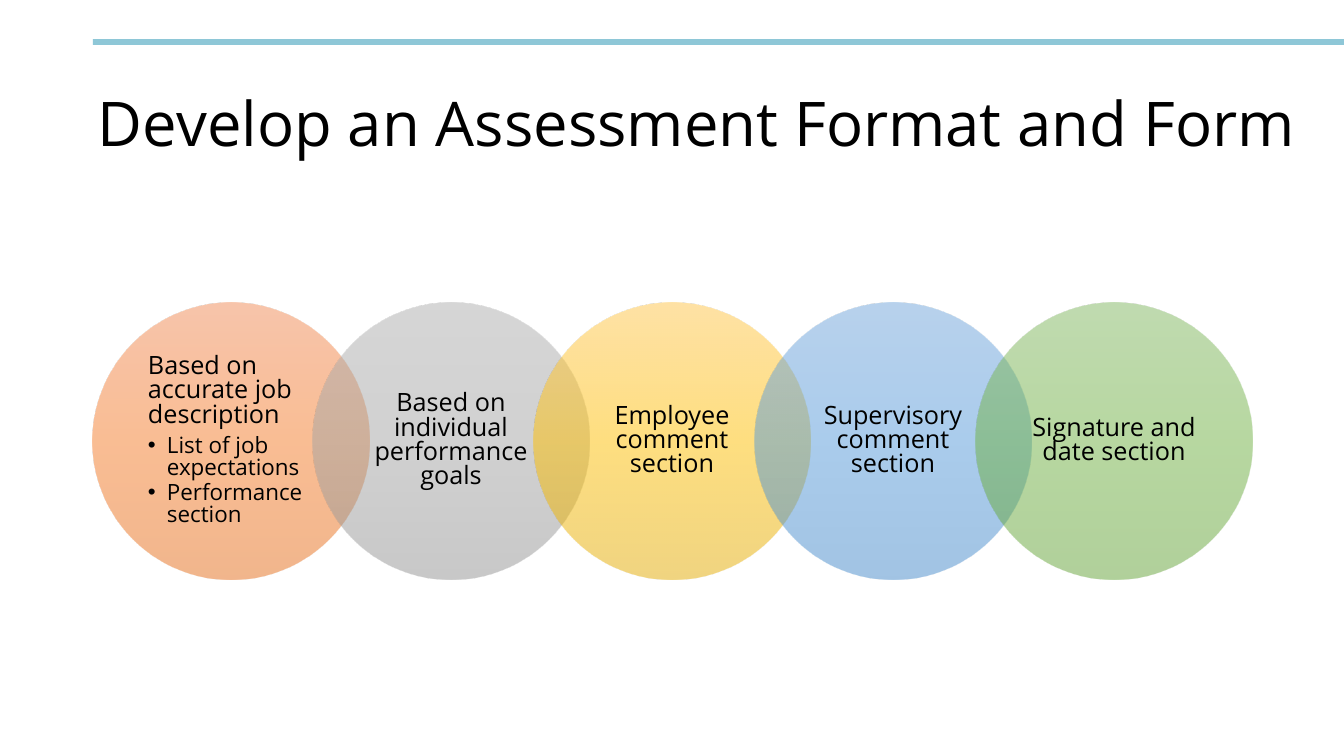
from lxml.etree import SubElement
from pptx import Presentation
from pptx.dml.color import RGBColor
from pptx.enum.shapes import MSO_SHAPE as Shape
from pptx.enum.text import MSO_ANCHOR as Anchor, PP_ALIGN as Align
from pptx.oxml.ns import qn
from pptx.util import Emu, Pt

COLORS = {
    "text": "000000",
    "rule": "8EC7D7",
    "orange": ("F18C57", "F67B28", "E56C19"),
    "gray": ("AFAFAF", "A5A5A5", "939393"),
    "yellow": ("FFC64B", "FFC000", "E3AB00"),
    "blue": ("71A6DB", "559BDB", "448ACA"),
    "green": ("81B861", "6FB242", "62A336"),
}


def px(value):
    return Emu(round(value * 914400 / 100.8))


class SlideBuilder:
    font = "Open Sans"

    def __init__(self, slide):
        self.slide = slide

    def shape(self, kind, left, top, width, height):
        shape = self.slide.shapes.add_shape(kind, px(left), px(top), px(width), px(height))
        shape.shadow.inherit = False
        shape.line.fill.background()
        return shape

    def bar(self, left, top, width, height, color):
        bar = self.shape(Shape.RECTANGLE, left, top, width, height)
        bar.fill.solid()
        bar.fill.fore_color.rgb = RGBColor.from_string(COLORS[color])

    def circle(self, left, top, size, color):
        circle = self.shape(Shape.OVAL, left, top, size, size)
        circle.fill.gradient()
        circle.fill.gradient_angle = 270
        # Three half-transparent stops, top to bottom
        stops = circle.element.spPr.find(qn("a:gradFill")).find(qn("a:gsLst"))
        for stop in list(stops):
            stops.remove(stop)
        for position, value in zip((0, 50000, 100000), COLORS[color]):
            stop = SubElement(stops, qn("a:gs"), pos=str(position))
            rgb = SubElement(stop, qn("a:srgbClr"), val=value)
            SubElement(rgb, qn("a:alpha"), val="50000")

    def text_box(self, left, top, width, height, margins=(10, 5)):
        box = self.slide.shapes.add_textbox(px(left), px(top), px(width), px(height))
        frame = box.text_frame
        frame.word_wrap = True
        frame.vertical_anchor = Anchor.MIDDLE
        frame.margin_left = frame.margin_right = px(margins[0])
        frame.margin_top = frame.margin_bottom = px(margins[1])
        return frame

    def add_text(self, paragraph, text, size, spacing, after=0, align=Align.LEFT):
        paragraph.alignment = align
        paragraph.line_spacing = spacing
        paragraph.space_after = Pt(after)
        run = paragraph.add_run()
        run.text = text
        run.font.name = self.font
        run.font.size = Pt(size)
        run.font.color.rgb = RGBColor.from_string(COLORS["text"])

    def add_bullet(self, paragraph, text, size, spacing, after):
        self.add_text(paragraph, text, size, spacing, after)
        paragraph.level = 1
        properties = paragraph._p.get_or_add_pPr()
        properties.set("marL", str(px(19)))
        properties.set("indent", str(-px(19)))
        SubElement(properties, qn("a:buFont"), typeface="Arial")
        SubElement(properties, qn("a:buChar"), char="•")


def main():
    presentation = Presentation()
    presentation.slide_width = px(1344)
    presentation.slide_height = px(756)
    builder = SlideBuilder(presentation.slides.add_slide(presentation.slide_layouts[6]))

    # Top rule and title
    builder.bar(93, 39, 1251, 6, "rule")
    title = builder.text_box(88, 80, 1226, 94)
    builder.add_text(title.paragraphs[0], "Develop an Assessment Format and Form", 44, 0.9)

    # Row of overlapping circles
    sections = [
        ("orange", "Based on accurate job description",
         ["List of job expectations", "Performance section"]),
        ("gray", "Based on individual performance goals", []),
        ("yellow", "Employee comment section", []),
        ("blue", "Supervisory comment section", []),
        ("green", "Signature and date section", []),
    ]
    first_left, last_left, top, size, inset = 93, 976, 303, 276, 40
    text_size = size - 2 * inset
    for index, (color, heading, details) in enumerate(sections):
        left = first_left + index * (last_left - first_left) // (len(sections) - 1)
        builder.circle(left, top, size, color)
        frame = builder.text_box(left + inset, top + inset, text_size, text_size, (15, 3))
        align = Align.LEFT if details else Align.CENTER
        builder.add_text(frame.paragraphs[0], heading, 18, 0.8, 6, align)
        for detail in details:
            builder.add_bullet(frame.add_paragraph(), detail, 16, 0.8, 3)

    presentation.save("out.pptx")


if __name__ == "__main__":
    main()
